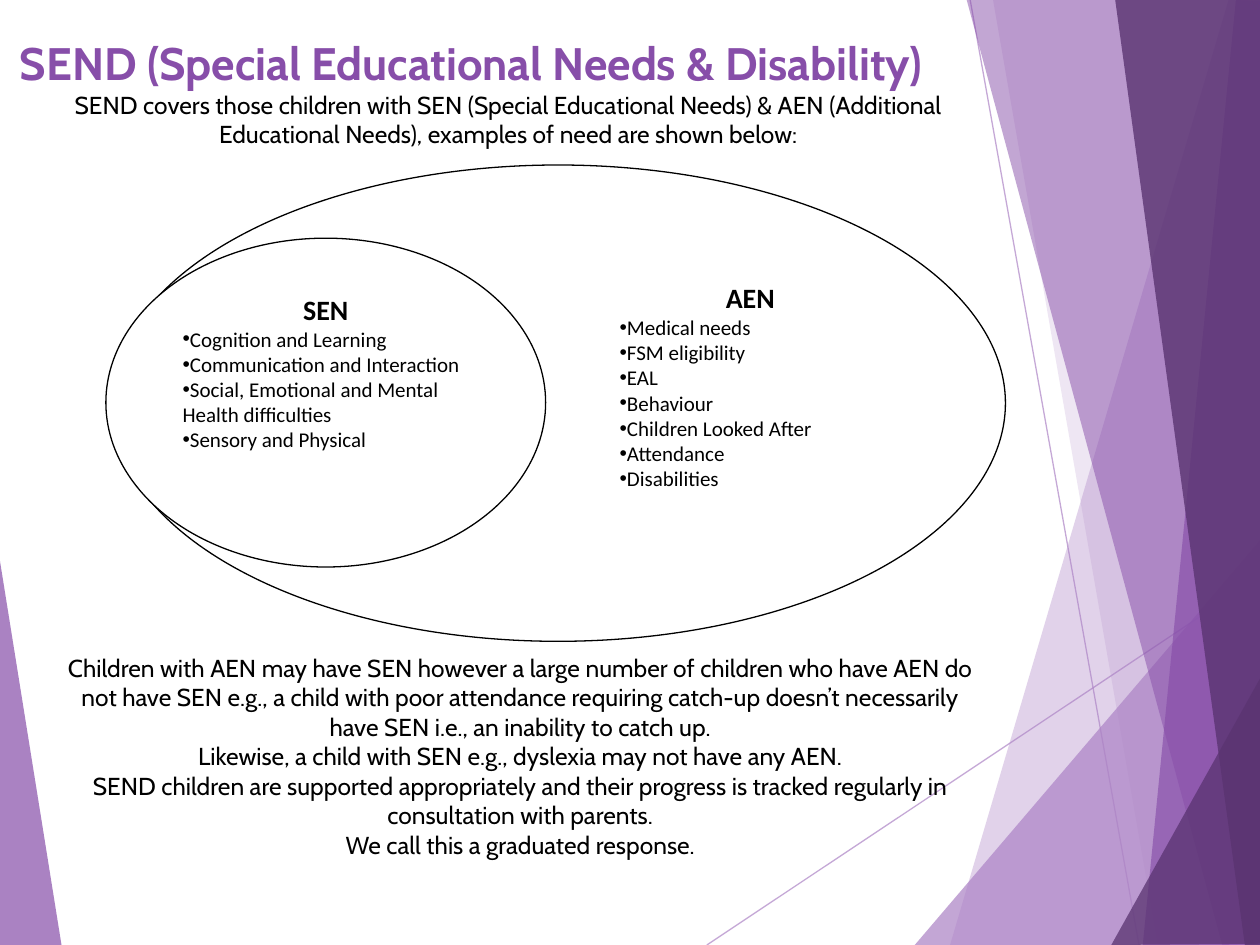
"""Build the SEND overview slide with its SEN and AEN diagram."""
from lxml import etree
from pptx import Presentation
from pptx import util as u
from pptx.dml.color import RGBColor
from pptx.enum import shapes, text
from pptx.oxml.ns import qn

BLACK = RGBColor(0x00, 0x00, 0x00)
WHITE = RGBColor(0xFF, 0xFF, 0xFF)
LILAC = RGBColor(0xAD, 0x84, 0xC6)
PURPLE = RGBColor(0x87, 0x4E, 0xA9)
PLUM = RGBColor(0x5A, 0x34, 0x71)

RAYS = [((5.61, 7.5), (10.01, 4.57)), ((7.7, 0), (9.04, 7.5))]
FACETS = [
    (LILAC, 36, [(9.75, 0), (7.54, 7.5), (10.02, 7.51), (10.01, 0.01)]),
    (LILAC, 20, [(7.88, -0.01), (9.19, 7.5), (10.01, 7.5), (10.01, -0.01)]),
    (LILAC, 72, [(7.26, 7.5), (10, 4.29), (10.01, 7.5)]),
    (PURPLE, 50, [(7.67, -0.01), (9.7, 7.5), (10.01, 7.49), (10.01, -0.01)]),
    (PURPLE, 66, [(9.81, -0.01), (9.07, 7.5), (10.01, 7.5), (10, -0.01)]),
    (PLUM, 80, [(8.85, -0.01), (9.88, 7.5), (10.02, 7.5), (10, -0.01)]),
    (PLUM, 76, [(8.82, 7.5), (10.02, 5.35), (10.02, 7.49)]),
    (PURPLE, 70, [(-0.01, 4.39), (0.49, 7.51), (-0.01, 7.5)]),
]
SEN = ["Cognition and Learning", "Communication and Interaction",
       "Social, Emotional and Mental Health difficulties", "Sensory and Physical"]
AEN = ["Medical needs", "FSM eligibility", "EAL", "Behaviour",
       "Children Looked After", "Attendance", "Disabilities"]
TITLE = "SEND (Special Educational Needs & Disability)"
INTRO = ("SEND covers those children with SEN (Special Educational Needs) & AEN "
         "(Additional Educational Needs), examples of need are shown below:")
NOTES = [
    "Children with AEN may have SEN however a large number of children who have "
    "AEN do not have SEN e.g., a child with poor attendance requiring catch-up "
    "doesn’t necessarily have SEN i.e., an inability to catch up.",
    "Likewise, a child with SEN e.g., dyslexia may not have any AEN.",
    "SEND children are supported appropriately and their progress is tracked "
    "regularly in consultation with parents.",
    "We call this a graduated response.",
]


class Deck:
    """Hold the fonts and the current slide, and draw its elements."""

    heading_font = "Cabin"
    list_font = "Calibri"

    def __init__(self, prs):
        self.s = prs.slides.add_slide(prs.slide_layouts[6])

    def fade(self, fill, percent):
        """Set the opacity of a solid fill's colour."""
        color = fill._xPr.find(".//" + qn("a:srgbClr"))
        etree.SubElement(color, qn("a:alpha"), val=str(percent * 1000))

    def ray(self, start, end):
        """Draw a thin translucent line."""
        ends = [u.Inches(v) for v in (*start, *end)]
        sp = self.s.shapes.add_connector(shapes.MSO_CONNECTOR.STRAIGHT, *ends)
        sp.line.width = u.Pt(0.75)
        sp.line.color.rgb = LILAC
        self.fade(sp.line.fill, 70)
        etree.SubElement(sp._element.spPr, qn("a:effectLst"))

    def facet(self, color, opacity, points):
        """Draw a translucent polygon."""
        pts = [(u.Inches(x), u.Inches(y)) for x, y in points]
        fb = self.s.shapes.build_freeform(*pts[0])
        fb.add_line_segments(pts[1:], close=True)
        sp = fb.convert_to_shape()
        sp.shadow.inherit = False
        sp.fill.solid()
        sp.fill.fore_color.rgb = color
        self.fade(sp.fill, opacity)
        sp.line.fill.background()

    def panel(self, kind, box, outlined=True):
        """Draw a white shape and return its text frame."""
        sp = self.s.shapes.add_shape(kind, *[u.Inches(v) for v in box])
        sp.shadow.inherit = False
        sp.fill.solid()
        sp.fill.fore_color.rgb = WHITE
        if outlined:
            sp.line.color.rgb = BLACK
            sp.line.width = u.Pt(0.75)
        else:
            sp.line.fill.background()
        return self.frame(sp, text.MSO_ANCHOR.TOP)

    def textbox(self, box, anchor):
        """Add a text box and return its text frame."""
        return self.frame(self.s.shapes.add_textbox(*[u.Inches(v) for v in box]), anchor)

    def frame(self, sp, anchor):
        """Wrap and anchor a shape's text."""
        tf = sp.text_frame
        tf.word_wrap = True
        tf.vertical_anchor = anchor
        return tf

    def para(self, tf, words, size, font, color=BLACK, bold=False, center=True, bullet=False):
        """Write one paragraph, using the empty first one if there is one."""
        p = tf.paragraphs[0] if not tf.text else tf.add_paragraph()
        p.alignment = text.PP_ALIGN.CENTER if center else text.PP_ALIGN.LEFT
        if bullet:
            pPr = p._p.get_or_add_pPr()
            etree.SubElement(pPr, qn("a:buFont"), typeface="Arial")
            etree.SubElement(pPr, qn("a:buChar"), char="•")
        r = p.add_run()
        r.text = words
        r.font.size = u.Pt(size)
        r.font.name = font
        r.font.bold = bold
        r.font.color.rgb = color

    def bullets(self, tf, heading, items):
        """Write a centred heading over a bulleted list."""
        self.para(tf, heading, 16, self.list_font, bold=True)
        for item in items:
            self.para(tf, item, 12, self.list_font, center=False, bullet=True)


def main():
    prs = Presentation()
    prs.slide_width, prs.slide_height = u.Inches(10), u.Inches(7.5)
    deck = Deck(prs)
    for start, end in RAYS:
        deck.ray(start, end)
    for color, opacity, points in FACETS:
        deck.facet(color, opacity, points)

    oval, rect = shapes.MSO_SHAPE.OVAL, shapes.MSO_SHAPE.RECTANGLE
    deck.panel(oval, (0.88, 1.31, 7.1, 3.78))
    deck.bullets(deck.panel(oval, (0.84, 1.89, 3.49, 2.61)), "SEN", SEN)
    deck.bullets(deck.panel(rect, (4.82, 2.18, 2.27, 2.21), outlined=False), "AEN", AEN)

    tf = deck.textbox((0.06, 0.23, 7.95, 1.31), text.MSO_ANCHOR.TOP)
    deck.para(tf, TITLE, 26, deck.heading_font, PURPLE, bold=True, center=False)
    deck.para(tf, INTRO, 14, deck.heading_font)
    tf = deck.textbox((0.43, 5.09, 7.4, 1.82), text.MSO_ANCHOR.MIDDLE)
    for note in NOTES:
        deck.para(tf, note, 14, deck.heading_font)
    prs.save("out.pptx")


if __name__ == "__main__":
    main()
